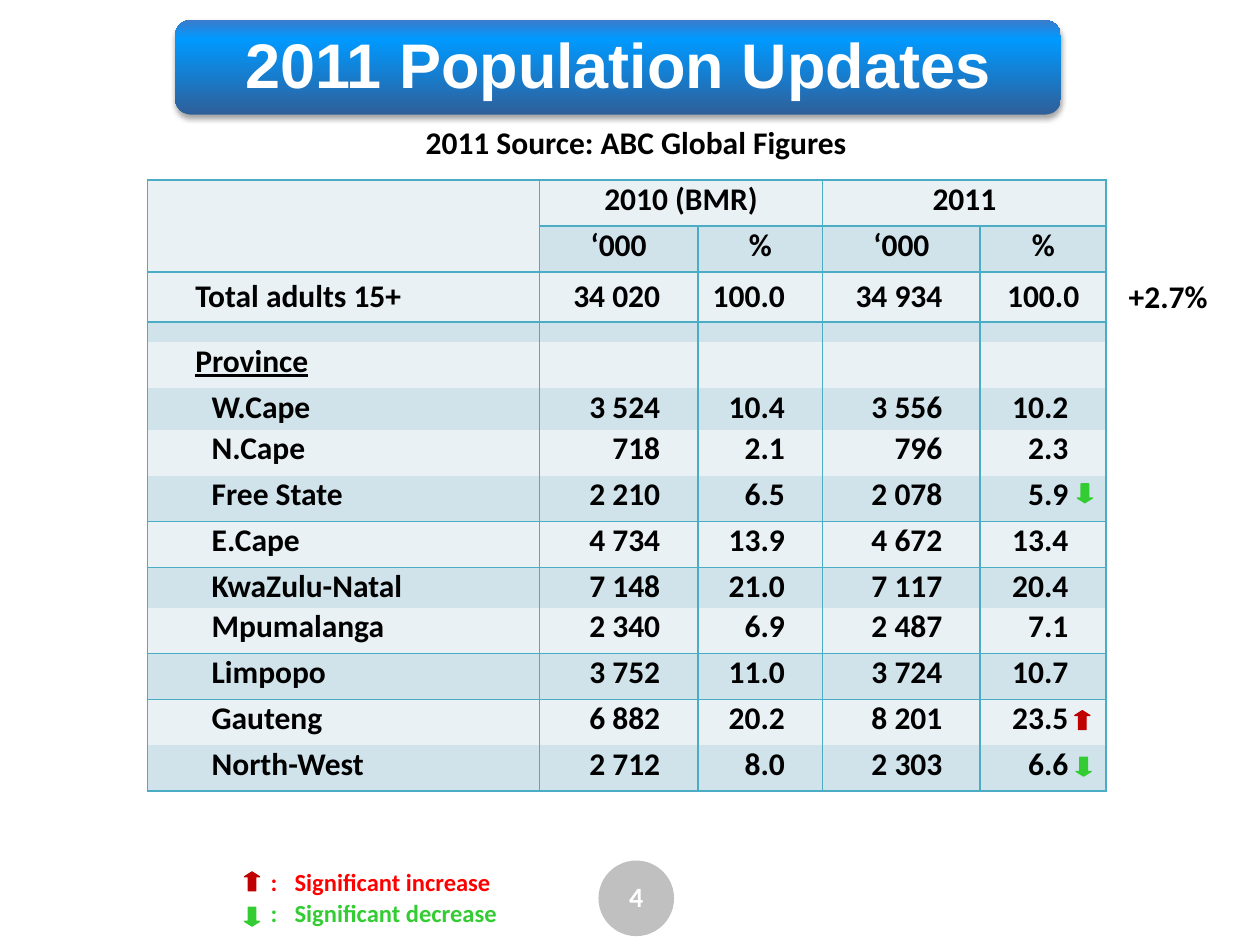
from lxml import etree
from pptx import Presentation, util as u
from pptx.dml.color import RGBColor
from pptx.enum import shapes, text
from pptx.oxml.ns import qn

WHITE = RGBColor(0xFF, 0xFF, 0xFF)
BLACK = RGBColor(0, 0, 0)
GREY = RGBColor(0xC0, 0xC0, 0xC0)
TEAL = RGBColor(0x4B, 0xAC, 0xC6)
BANDS = RGBColor(0xE9, 0xF1, 0xF5), RGBColor(0xD0, 0xE3, 0xEA)
RED = RGBColor(0xFF, 0, 0)
DARK_RED = RGBColor(0xC0, 0, 0)
GREEN = RGBColor(0x33, 0xCC, 0x33)
TITLE_STOPS = ((0, RGBColor(0x2F, 0x5F, 0x99)), (80, RGBColor(0, 0x99, 0xFF)),
               (100, RGBColor(0x3A, 0x7C, 0xCB)))
LEFT, CENTER, RIGHT = text.PP_ALIGN.LEFT, text.PP_ALIGN.CENTER, text.PP_ALIGN.RIGHT
TOP, MIDDLE = text.MSO_ANCHOR.TOP, text.MSO_ANCHOR.MIDDLE
UP = shapes.MSO_SHAPE.UP_ARROW, DARK_RED, 0.32
DOWN = shapes.MSO_SHAPE.DOWN_ARROW, GREEN, 0.31

COLUMNS = (2.8, 28.3, 12.6, 9.9, 12.5, 10)
TABLE_BOX = (11.7, 14.3, sum(COLUMNS), 48.5)
TOTAL_ROW, GAP_ROW, PROVINCE_ROW = 2, 3, 4
SPECIAL_HEIGHTS = {TOTAL_ROW: 4, GAP_ROW: 1.6, 5: 3.3, 9: 3.2}
GROUP_ENDS = (0, 1, 7, 10, 13)
ROWS = (
    ("", "2010 (BMR)", "", "2011", ""),
    ("", "‘000", "%", "‘000", "%"),
    ("Total adults 15+", "34 020", "100.0", "34 934", "100.0"),
    ("",) * 5,
    ("Province", "", "", "", ""),
    ("W.Cape", "3 524", "10.4", "3 556", "10.2"),
    ("N.Cape", "718", "2.1", "796", "2.3"),
    ("Free State", "2 210", "6.5", "2 078", "5.9"),
    ("E.Cape", "4 734", "13.9", "4 672", "13.4"),
    ("KwaZulu-Natal", "7 148", "21.0", "7 117", "20.4"),
    ("Mpumalanga", "2 340", "6.9", "2 487", "7.1"),
    ("Limpopo", "3 752", "11.0", "3 724", "10.7"),
    ("Gauteng", "6 882", "20.2", "8 201", "23.5"),
    ("North-West", "2 712", "8.0", "2 303", "6.6"),
)


def node(parent, tag, **attrs):
    return etree.SubElement(parent, qn(tag), {k: str(v) for k, v in attrs.items()})


class Deck:
    """Style and current slide; lengths count cells of a 100 by 75 grid."""

    def __init__(self, font="Calibri", size=18):
        self.prs = Presentation()
        self.prs.slide_width, self.prs.slide_height = u.Inches(10), u.Inches(7.5)
        self.s = self.prs.slides.add_slide(self.prs.slide_layouts[6])
        self.font, self.size = font, size

    def grid(self, *cells):
        return [round(self.prs.slide_width * c / 100) for c in cells]

    def add_text(self, p, words, align=LEFT, **values):
        p.alignment = align
        r = p.add_run()
        r.text = words
        values = {"name": self.font, "size": self.size, "bold": True} | values
        values["size"] = u.Pt(values["size"])
        r.font.color.rgb = values.pop("color", BLACK)
        for key, value in values.items():
            setattr(r.font, key, value)

    def label(self, box, words, align=LEFT, wrap=True, tab=None, **values):
        tf = self.s.shapes.add_textbox(*self.grid(*box)).text_frame
        tf.word_wrap = wrap
        p = tf.paragraphs[0]
        if tab:
            tabs = node(p._p.get_or_add_pPr(), "a:tabLst")
            node(tabs, "a:tab", pos=self.grid(tab)[0], algn="l")
        self.add_text(p, words, align, **values)

    def shape(self, kind, box, color, outlined=False):
        sp = self.s.shapes.add_shape(kind, *self.grid(*box))
        sp.shadow.inherit = False
        sp.fill.solid()
        sp.fill.fore_color.rgb = color
        if outlined:
            sp.line.color.rgb, sp.line.width = color, u.Pt(0.75)
        else:
            sp.line.fill.background()
        return sp

    def arrow(self, left, top, style):
        kind, color, head = style
        sp = self.shape(kind, (left, top, 1.2, 1.5), color, outlined=True)
        sp.adjustments[0], sp.adjustments[1] = 0.5, head

    def banner(self, box, words, stops):
        sp = self.shape(shapes.MSO_SHAPE.ROUNDED_RECTANGLE, box, WHITE)
        sp.fill.gradient()
        sp.fill.gradient_angle = 90
        gs_list = sp._element.spPr.find(qn("a:gradFill")).find(qn("a:gsLst"))
        gs_list[:] = []
        for share, color in stops:
            gs = node(gs_list, "a:gs", pos=share * 1000)
            node(gs, "a:srgbClr", val=color)
        shadow = node(sp._element.spPr.find(qn("a:effectLst")), "a:outerShdw",
                      blurRad=u.Pt(3.1), dist=u.Pt(1.8), dir=5400000, rotWithShape=0)
        node(node(shadow, "a:srgbClr", val=BLACK), "a:alpha", val=35000)
        sp.text_frame.vertical_anchor = MIDDLE
        p = sp.text_frame.paragraphs[0]
        p.line_spacing = 0.95
        self.add_text(p, words, CENTER, name="Arial", size=36, color=WHITE)

    def border(self, cell, sides):
        """Draw the sides, given as letters in the order L, R, T, B."""
        tcPr = cell._tc.get_or_add_tcPr()
        for i, side in enumerate(sides):
            ln = etree.Element(qn(f"a:ln{side}"), w=str(u.Pt(1)))
            node(node(ln, "a:solidFill"), "a:srgbClr", val=TEAL)
            tcPr.insert(i, ln)

    def cell(self, cell, words, fill, sides, margins=(1, 1), anchor=TOP,
             indent=0, align=LEFT, **values):
        cell.fill.solid()
        cell.fill.fore_color.rgb = fill
        self.border(cell, sides)
        cell.margin_left, cell.margin_right = self.grid(*margins)
        cell.margin_top = cell.margin_bottom = 0
        cell.vertical_anchor = anchor
        p = cell.text_frame.paragraphs[0]
        if words:
            if indent:
                p._p.get_or_add_pPr().set("marL", str(self.grid(indent)[0]))
            self.add_text(p, words, align, **values)
        else:
            node(p._p, "a:endParaRPr", sz=600)

    def table(self, box, widths, heights):
        tbl = self.s.shapes.add_table(len(heights), len(widths), *self.grid(*box)).table
        style = tbl._tbl.tblPr.find(qn("a:tableStyleId"))
        style.text = "{2D5ABB26-0587-4C30-8999-92F81FD0307C}"
        tbl.first_row = tbl.horz_banding = False
        for column, width in zip(tbl.columns, self.grid(*widths)):
            column.width = width
        for row, height in zip(tbl.rows, self.grid(*heights)):
            row.height = height
        return tbl


def cell_format(row, col):
    last = len(COLUMNS) - 1
    if row < TOTAL_ROW or (row, col) == (TOTAL_ROW, last):
        fmt = {"align": CENTER}
    elif col > 1:
        fmt = {"align": RIGHT, "margins": (0 if col % 2 else 1, 3)}
    else:
        fmt = {"indent": 1.3 if row > PROVINCE_ROW else 0,
               "underline": row == PROVINCE_ROW}
    sides = ("L" if col != 1 else "") + ("R" if col else "")
    sides += "T" if row == 0 or row - 1 in GROUP_ENDS else ""
    sides += "B" if row in GROUP_ENDS else ""
    return fmt | {"sides": sides, "fill": BANDS[row % 2],
                  "anchor": MIDDLE if row == TOTAL_ROW else TOP}


def population_table(deck):
    plain = (TABLE_BOX[3] - sum(SPECIAL_HEIGHTS.values())) / (len(ROWS) - len(SPECIAL_HEIGHTS))
    heights = [SPECIAL_HEIGHTS.get(i, plain) for i in range(len(ROWS))]
    tbl = deck.table(TABLE_BOX, COLUMNS, heights)
    for i, row in enumerate(ROWS):
        for j, words in enumerate(("",) + row):
            deck.cell(tbl.cell(i, j), words, **cell_format(i, j))
    for first, end in (((0, 0), (1, 1)), ((0, 2), (0, 3)), ((0, 4), (0, 5))):
        tbl.cell(*first).merge(tbl.cell(*end))


def main():
    deck = Deck()
    deck.shape(shapes.MSO_SHAPE.OVAL, (47.5, 68.3, 6, 6), GREY)
    deck.label((47.5, 69.3, 6, 3.7), "4", CENTER, size=16, color=WHITE)
    population_table(deck)
    deck.label((88.6, 21.5, 8.4, 4), "+2.7%", wrap=False)
    for left, top, style in ((85.3, 56.4, UP), (85.5, 38.4, DOWN), (85.4, 60.1, DOWN)):
        deck.arrow(left, top, style)
    deck.label((32.8, 9.3, 36, 4), "2011 Source: ABC Global Figures")
    deck.banner((13.9, 1.6, 70.3, 7.5), "2011 Population Updates", TITLE_STOPS)
    legend = (("increase", RED, UP, 68.3, 69.2), ("decrease", GREEN, DOWN, 70.8, 72))
    for change, color, style, text_top, arrow_top in legend:
        deck.label((20.5, text_top, 24, 3.4), f":\tSignificant {change}",
                   tab=1.9, size=14, color=color)
        deck.arrow(19.4, arrow_top, style)
    deck.prs.save("out.pptx")


if __name__ == "__main__":
    main()
